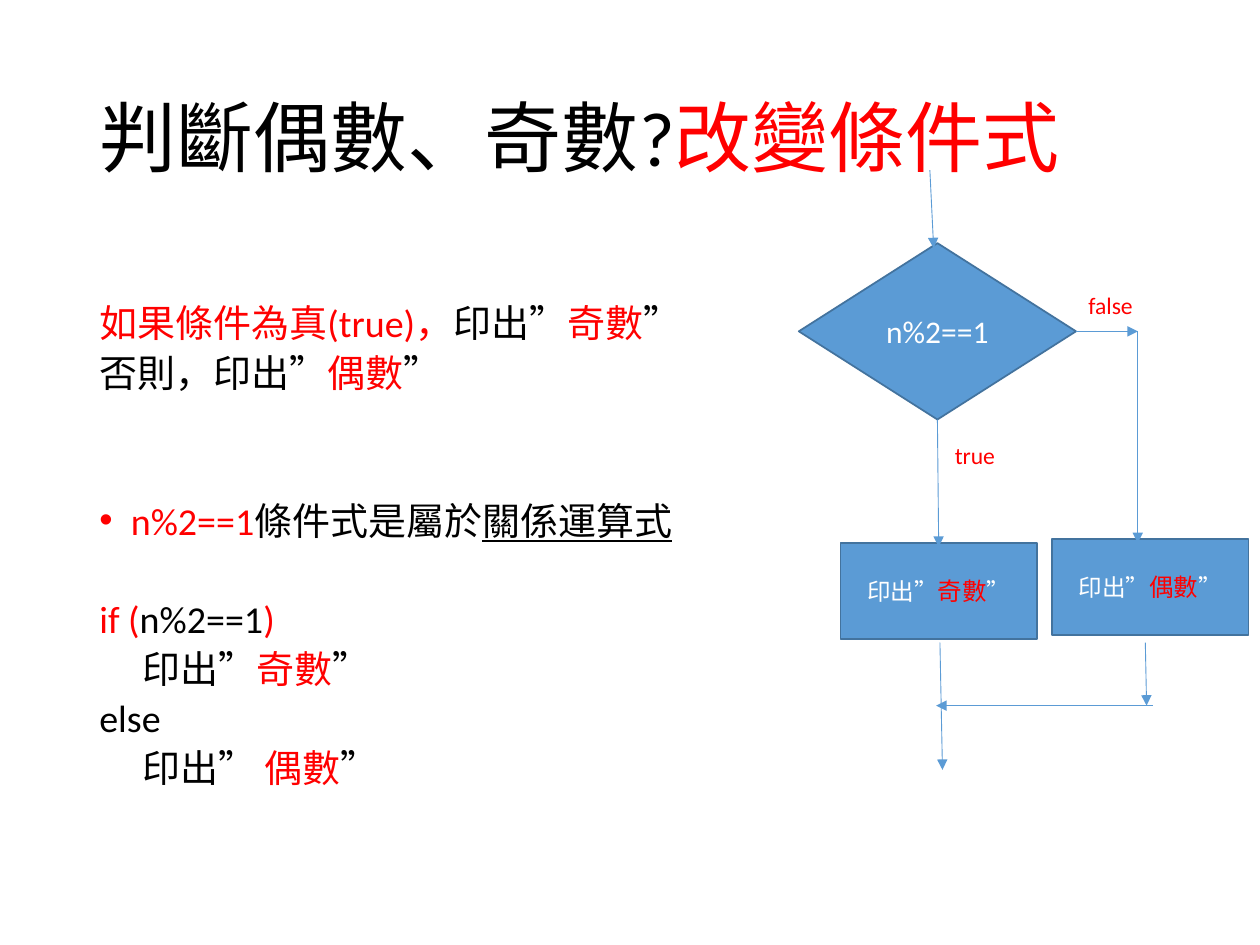
from lxml import etree
from pptx import Presentation
from pptx.dml.color import RGBColor
from pptx.enum import shapes, text
from pptx.oxml import ns
from pptx.util import Inches, Pt

THEME = {
    "font": "Calibri",
    "black": "000000", "red": "FF0000", "white": "FFFFFF",
    "fill": "5B9BD5", "edge": "43739E",
    "title": 44, "body": 21.7, "condition": 18, "label": 13.5, "value": 14,
}

# Runs are (text, colour) with an optional dict of font settings.
TITLE = [("判斷偶數、奇數?", "black"), ("改變條件式", "red")]

# Paragraphs are (runs, space before in points, left indent in inches, bullet).
BODY = [
    ([("如果條件為真(true)，", "red"), ("印出”", "black"), ("奇數", "red"), ("”", "black")], 10, 0, False),
    ([("否則，印出”", "black"), ("偶數", "red"), ("”", "black")], 10, 0, False),
    ([("n%2==1", "red"), ("條件式是屬於", "black"),
      ("關係運算式", "black", {"underline": True})], 66.5, 0.25, True),
    ([("if (", "red"), ("n%2==1", "black"), (")", "red")], 38, 0, False),
    ([("印出”", "black"), ("奇數", "red"), ("”", "black")], 10, 0.34, False),
    ([("else", "black")], 10, 0, False),
    ([("印出” ", "black"), ("偶數", "red"), ("”", "black")], 10, 0.34, False),
]


def print_step(value):
    return [("印出”", "white"), (value, "red", {"size": Pt(THEME["value"])}), ("”", "white")]


DIAMOND, RECTANGLE = shapes.MSO_SHAPE.DIAMOND, shapes.MSO_SHAPE.RECTANGLE
NODES = [
    (DIAMOND, (6.34, 1.93, 2.2, 1.4), [("n%2==1", "white")], "condition"),
    (RECTANGLE, (8.35, 4.28, 1.56, 0.76), print_step("偶數"), "label"),
    (RECTANGLE, (6.67, 4.31, 1.56, 0.76), print_step("奇數"), "label"),
]
BRANCH_LABELS = [("true", (7.48, 3.45, 0.53, 0.33)), ("false", (8.54, 2.26, 0.56, 0.33))]
ARROWS = [
    ((7.38, 1.35), (7.41, 1.97)),
    ((7.44, 3.33), (7.45, 4.34)),
    ((8.54, 2.63), (9.03, 2.63)),
    ((9.03, 2.63), (9.03, 4.31)),
    ((7.46, 5.1), (7.48, 6.11)),
    ((9.09, 5.1), (9.1, 5.6)),
    ((9.15, 5.6), (7.43, 5.6)),
]


def color(name):
    return RGBColor.from_string(THEME[name])


def inches(values):
    return [Inches(value) for value in values]


def add_runs(para, runs, size):
    for words, tint, *extra in runs:
        span = para.add_run()
        span.text = words
        span.font.name = THEME["font"]
        span.font.size = Pt(THEME[size])
        span.font.color.rgb = color(tint)
        for setting, value in (extra[0] if extra else {}).items():
            setattr(span.font, setting, value)


def indent(para, left, bullet):
    props = para._p.get_or_add_pPr()
    props.set("marL", str(Inches(left)))
    props.set("indent", str(-Inches(left) if bullet else 0))
    if bullet:
        etree.SubElement(props, ns.qn("a:buFont")).set("typeface", "Arial")
        etree.SubElement(props, ns.qn("a:buChar")).set("char", "•")
    else:
        etree.SubElement(props, ns.qn("a:buNone"))


def add_title(page):
    title = page.shapes.title
    title.left, title.top, title.width, title.height = inches((0.69, 0.4, 8.62, 1.45))
    frame = title.text_frame
    frame.auto_size = text.MSO_AUTO_SIZE.NONE
    frame.vertical_anchor = text.MSO_ANCHOR.MIDDLE
    para = frame.paragraphs[0]
    para.alignment = text.PP_ALIGN.LEFT
    para.line_spacing = 0.9
    add_runs(para, TITLE, "title")


def add_body(page):
    frame = page.shapes.add_textbox(*inches((0.69, 2.43, 5.63, 4.13))).text_frame
    frame.word_wrap = True
    for index, (runs, before, left, bullet) in enumerate(BODY):
        para = frame.add_paragraph() if index else frame.paragraphs[0]
        para.line_spacing = 0.7
        para.space_before = Pt(before)
        indent(para, left, bullet)
        add_runs(para, runs, "body")


def add_node(page, kind, place, runs, size):
    node = page.shapes.add_shape(kind, *inches(place))
    node.shadow.inherit = False
    node.fill.solid()
    node.fill.fore_color.rgb = color("fill")
    node.line.color.rgb = color("edge")
    node.line.width = Pt(1)
    node.text_frame.word_wrap = True
    node.text_frame.vertical_anchor = text.MSO_ANCHOR.MIDDLE
    para = node.text_frame.paragraphs[0]
    para.alignment = text.PP_ALIGN.CENTER
    add_runs(para, runs, size)


def add_arrow(page, start, end):
    arrow = page.shapes.add_connector(shapes.MSO_CONNECTOR.STRAIGHT, *inches(start + end))
    arrow.line.color.rgb = color("fill")
    arrow.line.width = Pt(0.5)
    etree.SubElement(arrow.line._get_or_add_ln(), ns.qn("a:tailEnd")).set("type", "triangle")
    etree.SubElement(arrow._element.spPr, ns.qn("a:effectLst"))


def add_branch_label(page, words, place):
    frame = page.shapes.add_textbox(*inches(place)).text_frame
    frame.word_wrap = False
    frame.auto_size = text.MSO_AUTO_SIZE.SHAPE_TO_FIT_TEXT
    add_runs(frame.paragraphs[0], [(words, "red")], "label")


def main():
    deck = Presentation()
    deck.slide_width, deck.slide_height = Inches(10), Inches(7.5)
    page = deck.slides.add_slide(deck.slide_layouts[5])
    add_title(page)
    add_body(page)
    for node in NODES:
        add_node(page, *node)
    for start, end in ARROWS:
        add_arrow(page, start, end)
    for words, place in BRANCH_LABELS:
        add_branch_label(page, words, place)
    deck.save("out.pptx")


if __name__ == "__main__":
    main()
